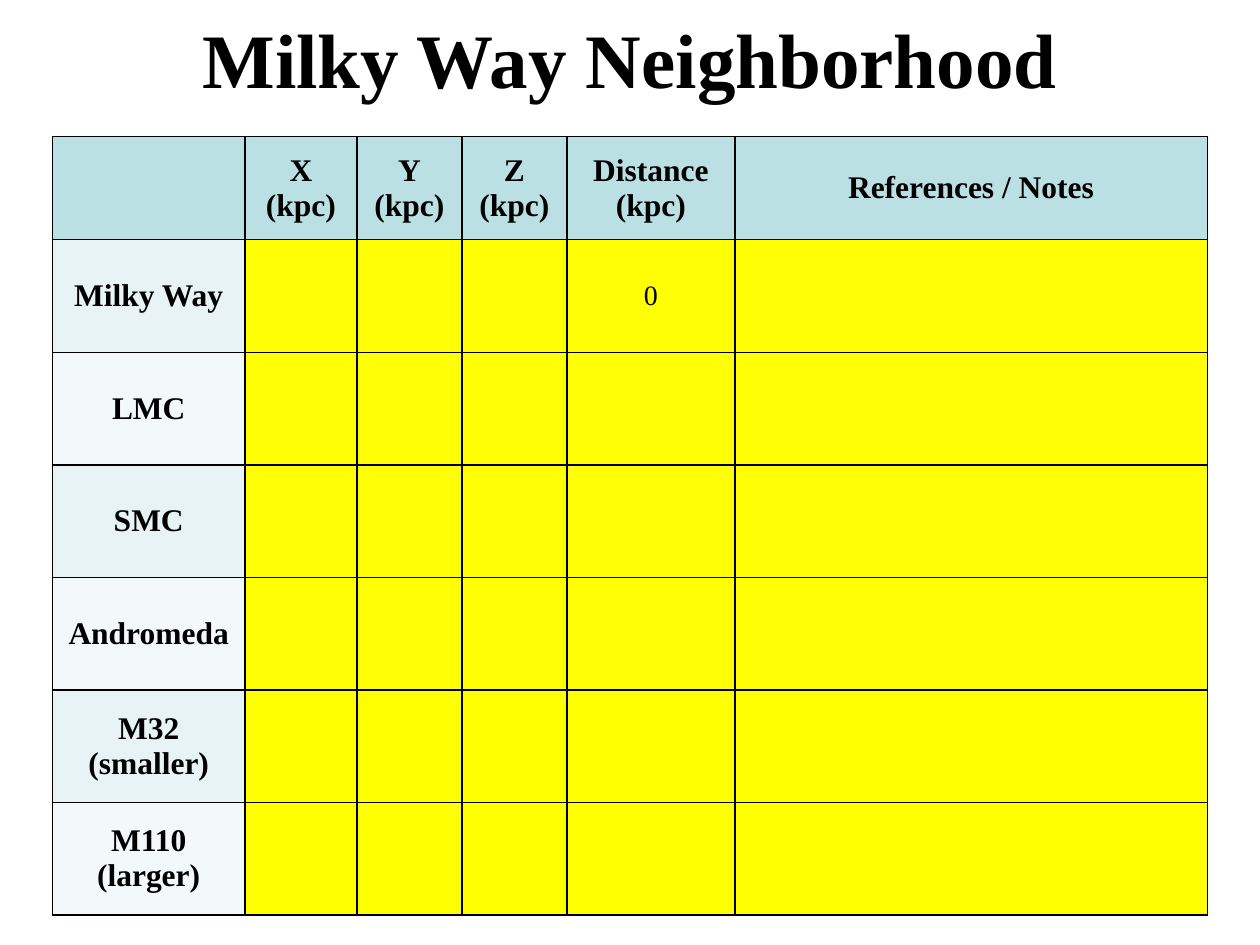
from dataclasses import dataclass

from lxml.etree import SubElement
from pptx import Presentation
from pptx.dml.color import RGBColor
from pptx.enum.text import MSO_ANCHOR, PP_ALIGN
from pptx.oxml.ns import qn
from pptx.util import Pt


@dataclass(frozen=True)
class Theme:
    font: str = "Times New Roman"
    ink: str = "000000"
    header: str = "BBE0E3"
    bands: tuple = ("E7F3F4", "F3F9FA")
    entry: str = "FFFE05"
    companion_entry: str = "FFFF00"
    title_size: int = 44
    label_size: int = 18
    value_size: int = 16


theme = Theme()


def format_text(frame, size, bold):
    for paragraph in frame.paragraphs:
        paragraph.alignment = PP_ALIGN.CENTER
        paragraph.font.size = Pt(size)
        for run in paragraph.runs:
            run.font.name = theme.font
            run.font.size = Pt(size)
            run.font.bold = bold
            run.font.color.rgb = RGBColor.from_string(theme.ink)


def draw_borders(cell):
    properties = cell._tc.get_or_add_tcPr()
    for position, side in enumerate(("lnL", "lnR", "lnT", "lnB")):
        border = properties.makeelement(qn(f"a:{side}"), {"w": str(Pt(1))})
        fill = SubElement(border, qn("a:solidFill"))
        SubElement(fill, qn("a:srgbClr"), val=theme.ink)
        properties.insert(position, border)


presentation = Presentation()
presentation.slide_width = Pt(720)
presentation.slide_height = Pt(540)
slide = presentation.slides.add_slide(presentation.slide_layouts[5])

title = slide.shapes.title
title.left, title.top, title.width, title.height = Pt(0), Pt(0), Pt(720), Pt(66)
title.text_frame.text = "Milky Way Neighborhood"
title.text_frame.vertical_anchor = MSO_ANCHOR.MIDDLE
format_text(title.text_frame, theme.title_size, True)

headings = ["", "X\n(kpc)", "Y\n(kpc)", "Z\n(kpc)", "Distance (kpc)", "References / Notes"]
galaxies = ["Milky Way", "LMC", "SMC", "Andromeda", "M32\n(smaller)", "M110\n(larger)"]
distances = {"Milky Way": "0"}
companions = galaxies[-2:]
column_widths = [110, 64, 60, 60, 96, 270]
row_heights = [59] + [64.3] * len(galaxies)

rows = [headings]
for galaxy in galaxies:
    rows.append([galaxy, "", "", "", distances.get(galaxy, ""), ""])

neighborhood = slide.shapes.add_table(
    len(rows), len(headings), Pt(30), Pt(78), Pt(sum(column_widths)), Pt(sum(row_heights))
).table
for column, width in zip(neighborhood.columns, column_widths):
    column.width = Pt(width)
for row, height in zip(neighborhood.rows, row_heights):
    row.height = Pt(height)

for row_index, row in enumerate(rows):
    for column_index, wording in enumerate(row):
        is_label = row_index == 0 or column_index == 0
        if row_index == 0:
            color = theme.header
        elif column_index == 0:
            color = theme.bands[(row_index - 1) % 2]
        elif row[0] in companions:
            color = theme.companion_entry
        else:
            color = theme.entry
        cell = neighborhood.cell(row_index, column_index)
        cell.text_frame.text = wording
        cell.vertical_anchor = MSO_ANCHOR.MIDDLE
        cell.fill.solid()
        cell.fill.fore_color.rgb = RGBColor.from_string(color)
        format_text(cell.text_frame, theme.label_size if is_label else theme.value_size, is_label)
        draw_borders(cell)

presentation.save("out.pptx")
